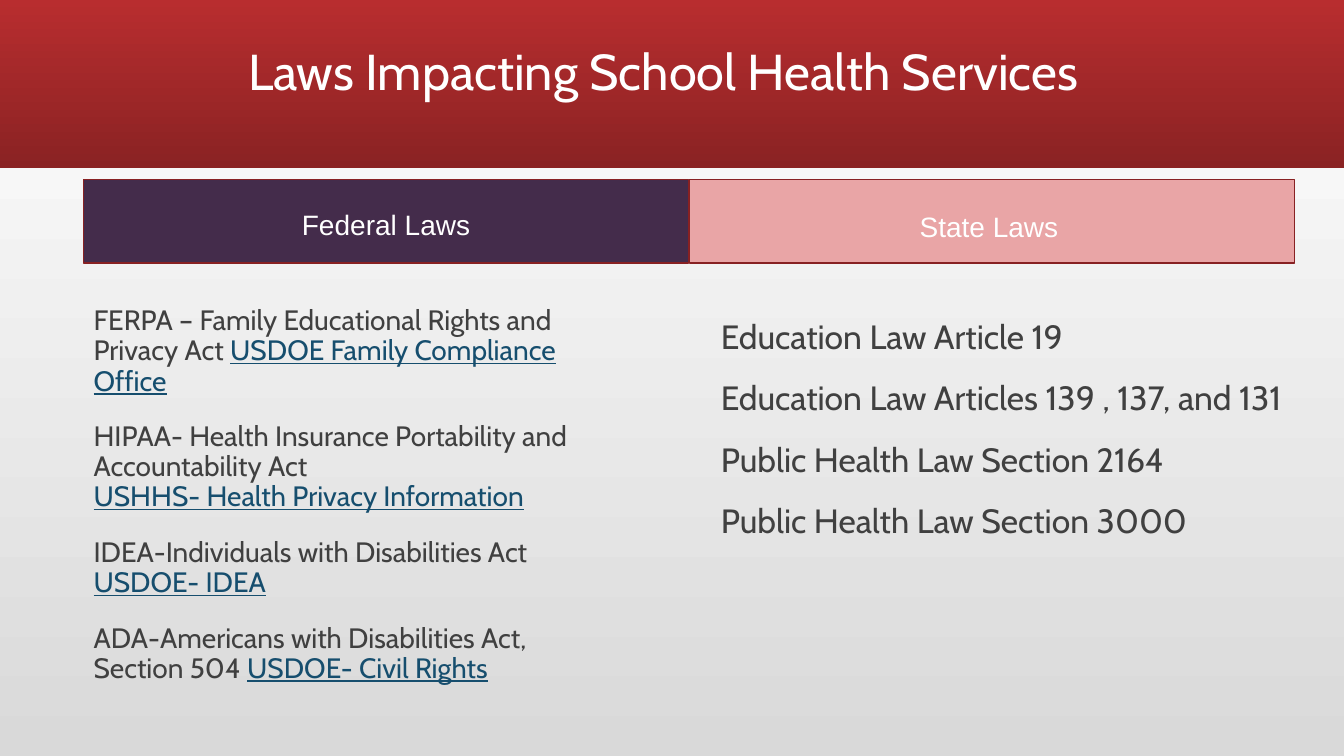
"""Build the slide on federal and state laws impacting school health services."""
from dataclasses import dataclass

from pptx import Presentation
from pptx.dml.color import RGBColor
from pptx.enum.shapes import MSO_SHAPE
from pptx.enum.text import MSO_ANCHOR, PP_ALIGN
from pptx.util import Pt

RECT = MSO_SHAPE.RECTANGLE
LEFT, CENTER = PP_ALIGN.LEFT, PP_ALIGN.CENTER
TOP, MIDDLE = MSO_ANCHOR.TOP, MSO_ANCHOR.MIDDLE
EMU_PER_PX = 9144


@dataclass(frozen=True)
class Theme:
    """Colours, fonts and type sizes."""
    white: str = "FFFFFF"
    text: str = "404040"
    link: str = "164E6E"
    backdrop: tuple = ("D9D9D9", "FFFFFF")
    band: tuple = ("B82D2F", "8A2223")
    border: str = "882123"
    federal: str = "442C4B"
    state: str = "E9A5A6"
    body_font: str = "Cabin"
    label_font: str = "Arial"
    title_size: int = 36
    state_size: int = 24
    federal_size: int = 20
    label_size: int = 20


def px(*lengths):
    """Turn pixel lengths into EMU."""
    return [n * EMU_PER_PX for n in lengths]


def rgb(value):
    """Turn a hex string into a colour."""
    return RGBColor.from_string(value)


class SlideBuilder:
    """Hold the theme and the current slide, and draw each kind of element."""

    def __init__(self, prs, theme):
        self.theme = theme
        self.s = prs.slides.add_slide(prs.slide_layouts[5])

    def gradient(self, fill, colors, angle):
        """Apply a two-stop linear gradient."""
        fill.gradient()
        fill.gradient_angle = angle
        for stop, color in zip(fill.gradient_stops, colors):
            stop.color.rgb = rgb(color)

    def rect(self, box):
        """Add a plain rectangle."""
        sp = self.s.shapes.add_shape(RECT, *px(*box))
        sp.shadow.inherit = False
        return sp

    def band(self, box):
        """Add the gradient band behind the title."""
        sp = self.rect(box)
        self.gradient(sp.fill, self.theme.band, 270)
        sp.line.fill.background()
        self.s.shapes.title.element.addprevious(sp.element)

    def style(self, p, font, size, color, align=LEFT):
        """Format one paragraph."""
        p.alignment = align
        p.font.name = font
        p.font.size = Pt(size)
        p.font.color.rgb = rgb(color)

    def title(self, text, box):
        """Place and format the title placeholder."""
        sp = self.s.shapes.title
        sp.left, sp.top, sp.width, sp.height = px(*box)
        tf = sp.text_frame
        tf.text = text
        tf.vertical_anchor = MIDDLE
        p = tf.paragraphs[0]
        p.line_spacing = 0.9
        self.style(p, self.theme.body_font, self.theme.title_size, self.theme.white)

    def text_frame(self, box):
        """Add a wrapping text box and return its frame."""
        tf = self.s.shapes.add_textbox(*px(*box)).text_frame
        tf.word_wrap = True
        tf.vertical_anchor = TOP
        return tf

    def heading(self, text, color, box, label_box):
        """Add a coloured column heading with its label."""
        sp = self.rect(box)
        sp.fill.solid()
        sp.fill.fore_color.rgb = rgb(color)
        sp.line.color.rgb = rgb(self.theme.border)
        sp.line.width = Pt(1)
        p = self.text_frame(label_box).paragraphs[0]
        p.text = text
        self.style(p, self.theme.label_font, self.theme.label_size, self.theme.white, CENTER)

    def laws(self, laws, size, box, margin=10):
        """Add a column of laws, each with an optional underlined source."""
        tf = self.text_frame(box)
        tf.margin_left, = px(margin)
        for i, (law, source, own_line) in enumerate(laws):
            p = tf.add_paragraph() if i else tf.paragraphs[0]
            p.line_spacing = 0.9
            p.space_before = Pt(18 if i else 0)
            self.style(p, self.theme.body_font, size, self.theme.text)
            p.add_run().text = law
            if own_line:
                p.add_line_break()
            if source:
                r = p.add_run()
                r.text = source
                r.font.underline = True
                r.font.color.rgb = rgb(self.theme.link)


FEDERAL_LAWS = [
    ("FERPA – Family Educational Rights and Privacy Act ",
     "USDOE Family Compliance Office", False),
    ("HIPAA- Health Insurance Portability and Accountability Act",
     "USHHS- Health Privacy Information", True),
    ("IDEA-Individuals with Disabilities Act", "USDOE- IDEA", True),
    ("ADA-Americans with Disabilities Act, Section 504 ",
     "USDOE- Civil Rights", False),
]
STATE_LAWS = [(law, "", False) for law in (
    "Education Law Article 19",
    "Education Law Articles 139 , 137, and 131",
    "Public Health Law Section 2164",
    "Public Health Law Section 3000",
)]


def main():
    """Build and save the slide."""
    prs = Presentation()
    prs.slide_width, prs.slide_height = px(1333, 750)
    theme = Theme()
    b = SlideBuilder(prs, theme)
    b.gradient(b.s.background.fill, theme.backdrop, 90)
    b.band((0, 0, 1333, 167))
    b.title("Laws Impacting School Health Services", (236, 40, 862, 68))
    b.laws(FEDERAL_LAWS, theme.federal_size, (83, 299, 537, 443))
    b.laws(STATE_LAWS, theme.state_size, (692, 313, 600, 412), margin=23)
    b.heading("Federal Laws", theme.federal, (83, 178, 600, 83), (85, 201, 596, 37))
    b.heading("State Laws", theme.state, (684, 178, 600, 83), (683, 203, 596, 37))
    prs.save("out.pptx")


if __name__ == "__main__":
    main()
